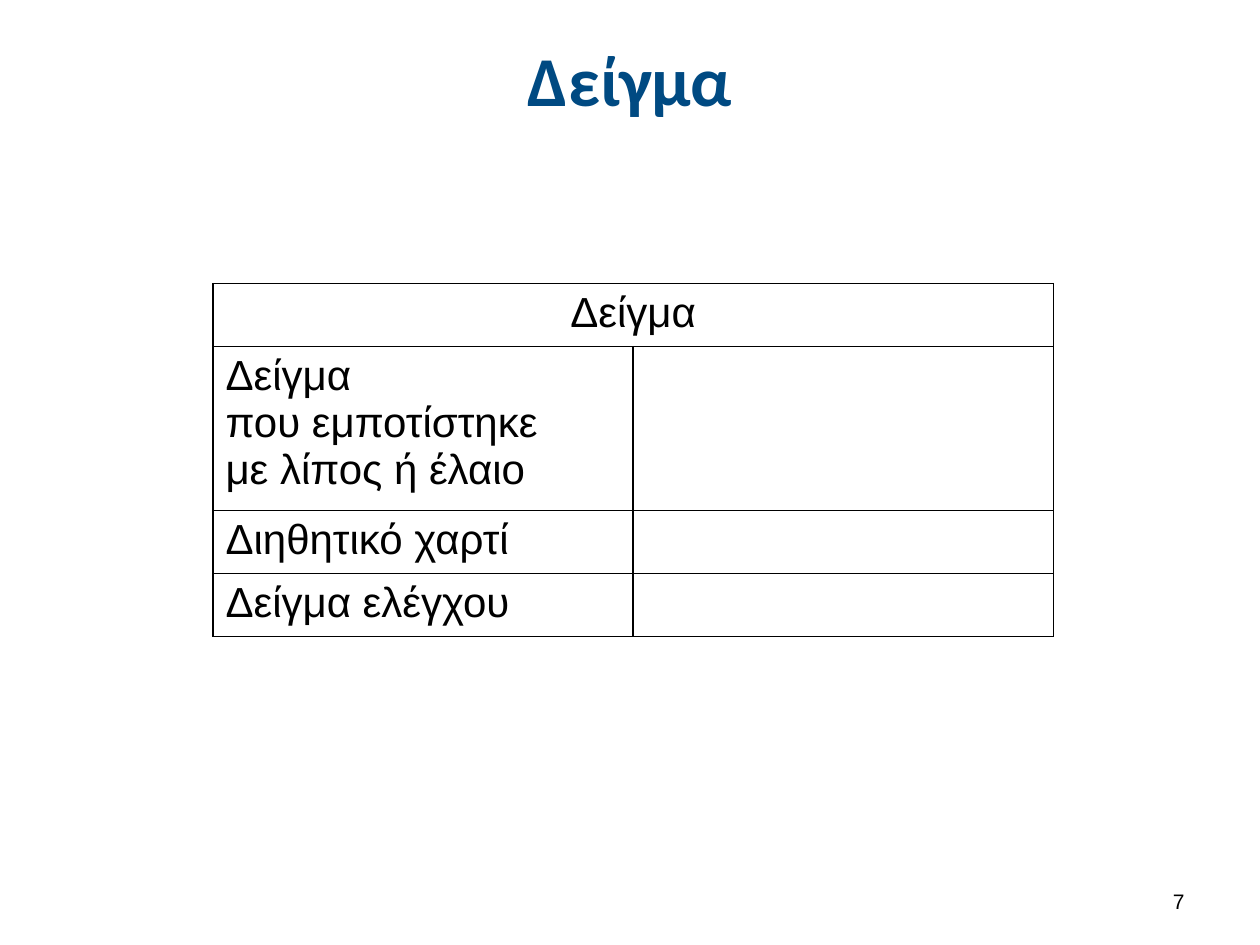
from lxml.etree import SubElement
from pptx import Presentation
from pptx.dml.color import RGBColor
from pptx.enum.text import MSO_ANCHOR, PP_ALIGN
from pptx.oxml.ns import qn
from pptx.util import Inches, Pt

NAVY = RGBColor(0x00, 0x4A, 0x82)
BLACK = RGBColor(0x00, 0x00, 0x00)

TABLE_LEFT, TABLE_TOP, TABLE_WIDTH = Inches(1.69), Inches(2.25), Inches(6.67)
ROW_HEIGHTS = (0.5, 1.3, 0.5, 0.5)
HEADER = "Δείγμα"
ROW_LABELS = (
    "Δείγμα\nπου εμποτίστηκε\nμε λίπος ή έλαιο",
    "Διηθητικό χαρτί",
    "Δείγμα ελέγχου",
)


def write(frame, text, size, font_name, color, alignment, bold=False):
    frame.text = text
    for paragraph in frame.paragraphs:
        paragraph.alignment = alignment
        font = paragraph.font
        font.size, font.name, font.bold = Pt(size), font_name, bold
        font.color.rgb = color


def add_title(slide, text):
    title = slide.shapes.title
    title.left, title.top = 0, Inches(0.13)
    title.width, title.height = Inches(10), Inches(0.99)
    title.text_frame.vertical_anchor = MSO_ANCHOR.MIDDLE
    write(title.text_frame, text, 40, "Calibri", NAVY, PP_ALIGN.CENTER, bold=True)


def outline(cell, color, width):
    properties = cell._tc.get_or_add_tcPr()
    for side in ("L", "R", "T", "B"):
        line = SubElement(properties, qn(f"a:ln{side}"), w=str(width))
        fill = SubElement(line, qn("a:solidFill"))
        SubElement(fill, qn("a:srgbClr"), val=str(color))


def add_sample_table(slide):
    frame = slide.shapes.add_table(
        len(ROW_HEIGHTS), 2, TABLE_LEFT, TABLE_TOP,
        TABLE_WIDTH, Inches(sum(ROW_HEIGHTS)))
    table = frame.table
    table.first_row = table.horz_banding = False
    for row, height in zip(table.rows, ROW_HEIGHTS):
        row.height = Inches(height)
    for cell in table.iter_cells():
        outline(cell, BLACK, Pt(1))
        cell.fill.background()

    header = table.cell(0, 0)
    header.merge(table.cell(0, 1))
    write(header.text_frame, HEADER, 24, "Arial", BLACK, PP_ALIGN.CENTER)
    for index, label in enumerate(ROW_LABELS, start=1):
        write(table.cell(index, 0).text_frame, label, 24, "Arial", BLACK, PP_ALIGN.LEFT)


def add_slide_number(slide, number):
    box = slide.shapes.add_textbox(Inches(7.17), Inches(6.95), Inches(2.33), Inches(0.4))
    box.text_frame.word_wrap = True
    box.text_frame.vertical_anchor = MSO_ANCHOR.MIDDLE
    write(box.text_frame, number, 12, "Arial", BLACK, PP_ALIGN.RIGHT)


def main():
    presentation = Presentation()
    presentation.slide_width, presentation.slide_height = Inches(10), Inches(7.5)
    slide = presentation.slides.add_slide(presentation.slide_layouts[5])
    add_title(slide, "Δείγμα")
    add_sample_table(slide)
    add_slide_number(slide, "7")
    presentation.save("out.pptx")


if __name__ == "__main__":
    main()
